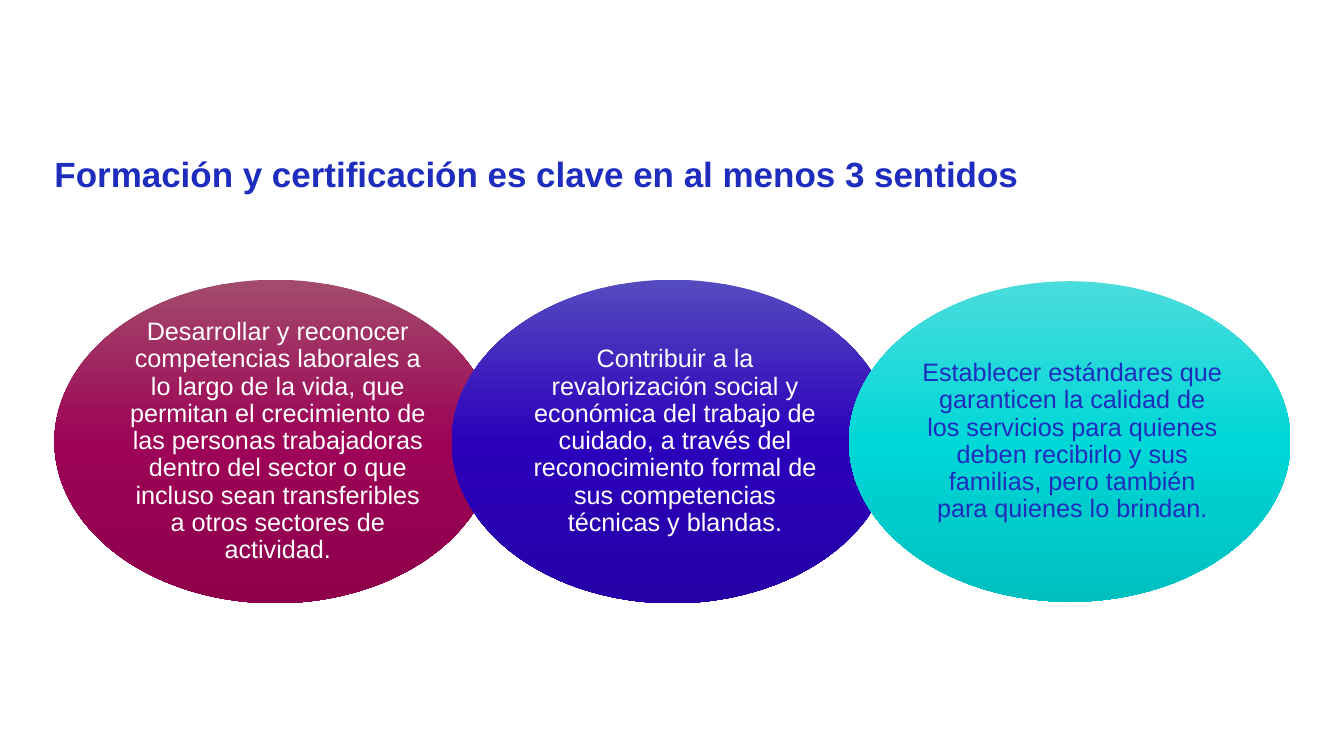
import copy
from dataclasses import dataclass

import pptx
import pptx.dml.color
import pptx.enum.shapes
import pptx.enum.text
import pptx.oxml.ns
import pptx.slide
import pptx.text.text
import pptx.util

Inches = pptx.util.Inches
RGBColor = pptx.dml.color.RGBColor

FONT = "Arial"
WHITE = RGBColor(0xFF, 0xFF, 0xFF)
BLUE = RGBColor(0x1E, 0x2D, 0xBE)
BERRY = (RGBColor(0xA3, 0x4B, 0x6C), RGBColor(0x9D, 0x03, 0x56), RGBColor(0x8E, 0x00, 0x4C))
INDIGO = (RGBColor(0x55, 0x4B, 0xBF), RGBColor(0x2C, 0x00, 0xBB), RGBColor(0x27, 0x00, 0xA7))
TURQUOISE = (RGBColor(0x4B, 0xDC, 0xDC), RGBColor(0x00, 0xD7, 0xD7), RGBColor(0x00, 0xBF, 0xBF))

LEFT = 0.54
OVAL_WIDTH = 4.38
OVAL_STEP = 3.94
OVAL_MIDDLE = 4.38


@dataclass(frozen=True)
class Purpose:
    text: str
    gradient: tuple[RGBColor, RGBColor, RGBColor]
    text_color: RGBColor
    height: float


PURPOSES = [
    Purpose(
        "Desarrollar y reconocer competencias laborales a lo largo de la vida, que permitan "
        "el crecimiento de las personas trabajadoras dentro del sector o que incluso sean "
        "transferibles a otros sectores de actividad.",
        BERRY, WHITE, 3.21),
    Purpose(
        "Contribuir a la revalorización social y económica del trabajo de cuidado, a través "
        "del reconocimiento formal de sus competencias técnicas y blandas.",
        INDIGO, WHITE, 3.21),
    Purpose(
        "Establecer estándares que garanticen la calidad de los servicios para quienes deben "
        "recibirlo y sus familias, pero también para quienes lo brindan.",
        TURQUOISE, BLUE, 3.18),
]


def write_text(frame: pptx.text.text.TextFrame, text: str, size: float, color: RGBColor,
               alignment: pptx.enum.text.PP_ALIGN, bold: bool = False) -> None:
    paragraph = frame.paragraphs[0]
    paragraph.alignment = alignment
    paragraph.line_spacing = 0.9
    run = paragraph.add_run()
    run.text = text
    run.font.name = FONT
    run.font.size = pptx.util.Pt(size)
    run.font.bold = bold
    run.font.color.rgb = color


def add_title(slide: pptx.slide.Slide, text: str) -> None:
    title = slide.shapes.title
    title.left, title.top = Inches(LEFT), Inches(1.56)
    title.width, title.height = Inches(12.26), Inches(0.79)
    frame = title.text_frame
    frame.margin_left = frame.margin_right = frame.margin_top = frame.margin_bottom = 0
    frame.vertical_anchor = pptx.enum.text.MSO_ANCHOR.TOP
    frame.auto_size = pptx.enum.text.MSO_AUTO_SIZE.NONE
    write_text(frame, text, 25, BLUE, pptx.enum.text.PP_ALIGN.LEFT, bold=True)


def add_purpose(slide: pptx.slide.Slide, purpose: Purpose, index: int) -> None:
    oval = slide.shapes.add_shape(
        pptx.enum.shapes.MSO_SHAPE.OVAL,
        Inches(LEFT + index * OVAL_STEP), Inches(OVAL_MIDDLE - purpose.height / 2),
        Inches(OVAL_WIDTH), Inches(purpose.height))
    oval.shadow.inherit = False
    oval.line.fill.background()

    # Three-stop gradient, top to bottom
    oval.fill.gradient()
    oval.fill.gradient_angle = 270
    stop_list = oval.element.spPr.find(".//" + pptx.oxml.ns.qn("a:gsLst"))
    stop_list.insert(1, copy.deepcopy(stop_list[0]))
    for position, (stop, color) in enumerate(zip(oval.fill.gradient_stops, purpose.gradient)):
        stop.position = position / 2
        stop.color.rgb = color

    # Text inside the oval
    frame = oval.text_frame
    frame.word_wrap = True
    frame.vertical_anchor = pptx.enum.text.MSO_ANCHOR.MIDDLE
    frame.margin_left = Inches(0.08)
    frame.margin_right = frame.margin_top = frame.margin_bottom = Inches(0.03)
    write_text(frame, purpose.text, 18, purpose.text_color, pptx.enum.text.PP_ALIGN.CENTER)


def main() -> None:
    presentation = pptx.Presentation()
    presentation.slide_width = Inches(13.33)
    presentation.slide_height = Inches(7.5)
    slide = presentation.slides.add_slide(presentation.slide_layouts[5])

    add_title(slide, "Formación y certificación es clave en al menos 3 sentidos")
    for index, purpose in enumerate(PURPOSES):
        add_purpose(slide, purpose, index)

    presentation.save("out.pptx")


if __name__ == "__main__":
    main()
